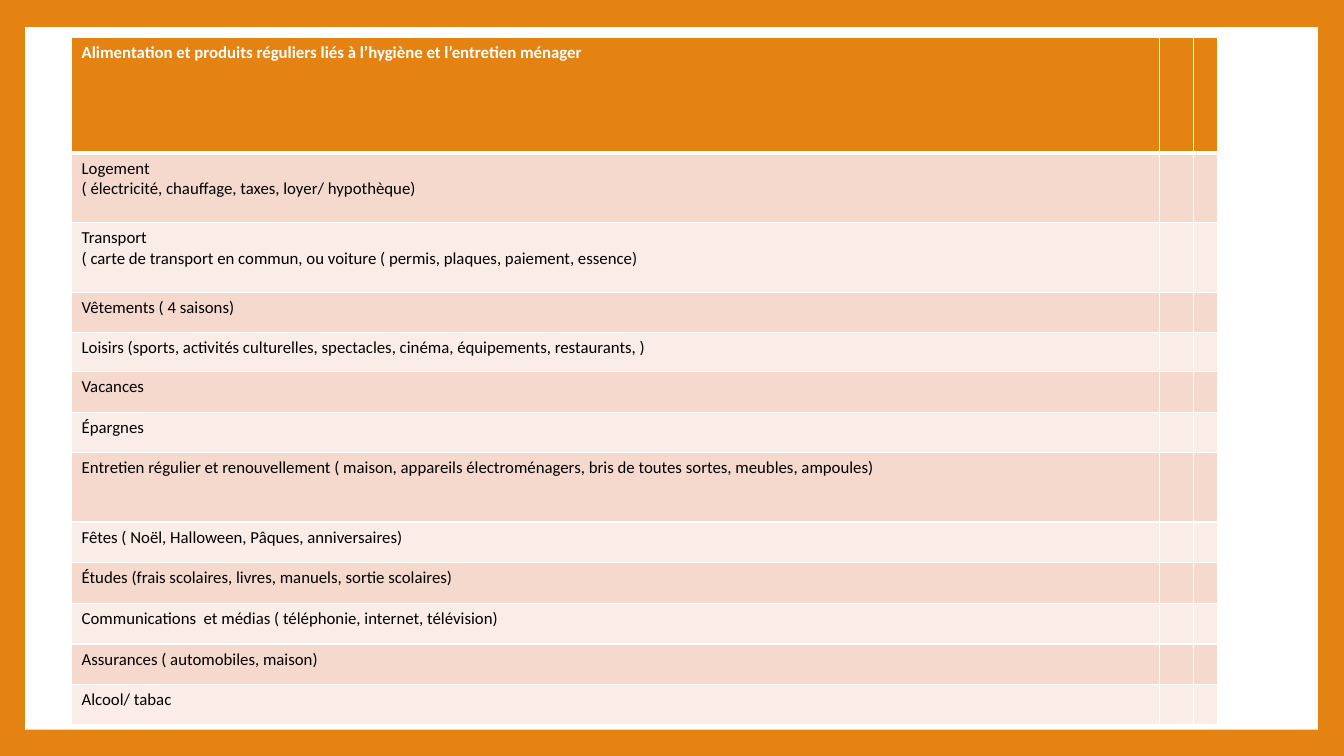
"""Build a slide with a table of household budget categories."""
import pptx
import pptx.dml.color
import pptx.enum.shapes
import pptx.oxml.ns
import pptx.util
from lxml import etree

Inches = pptx.util.Inches
Pt = pptx.util.Pt
RGBColor = pptx.dml.color.RGBColor

ORANGE = RGBColor(0xE4, 0x83, 0x12)
WHITE = RGBColor(0xFF, 0xFF, 0xFF)
BLACK = RGBColor(0x00, 0x00, 0x00)
DARK_BAND = RGBColor(0xF5, 0xD9, 0xCC)
LIGHT_BAND = RGBColor(0xFA, 0xED, 0xE7)

COLUMN_WIDTHS = [10.79, 0.34, 0.24]
BUDGET = [
    (1.15, ["Alimentation et produits réguliers liés à l’hygiène et l’entretien ménager"]),
    (0.69, ["Logement", "( électricité, chauffage, taxes, loyer/ hypothèque)"]),
    (0.69, ["Transport",
            "( carte de transport en commun, ou voiture ( permis, plaques, paiement, essence)"]),
    (0.4, ["Vêtements ( 4 saisons)"]),
    (0.39, ["Loisirs (sports, activités culturelles, spectacles, cinéma, équipements, restaurants, )"]),
    (0.4, ["Vacances"]),
    (0.4, ["Épargnes"]),
    (0.69, ["Entretien régulier et renouvellement ( maison, appareils électroménagers, "
            "bris de toutes sortes, meubles, ampoules)"]),
    (0.4, ["Fêtes ( Noël, Halloween, Pâques, anniversaires)"]),
    (0.41, ["Études (frais scolaires, livres, manuels, sortie scolaires)"]),
    (0.4, ["Communications  et médias ( téléphonie, internet, télévision)"]),
    (0.4, ["Assurances ( automobiles, maison)"]),
    (0.4, ["Alcool/ tabac"]),
]


def add_border(cell, side, points):
    qn = pptx.oxml.ns.qn
    properties = cell._tc.get_or_add_tcPr()
    line = etree.SubElement(properties, qn(f"a:ln{side}"), w=str(Pt(points)))
    fill = etree.SubElement(line, qn("a:solidFill"))
    etree.SubElement(fill, qn("a:srgbClr"), val=str(WHITE))


presentation = pptx.Presentation()
presentation.slide_width = Inches(13.33)
presentation.slide_height = Inches(7.5)
slide = presentation.slides.add_slide(presentation.slide_layouts[6])
slide.background.fill.solid()
slide.background.fill.fore_color.rgb = ORANGE

page = slide.shapes.add_shape(pptx.enum.shapes.MSO_SHAPE.RECTANGLE,
                              Inches(0.25), Inches(0.27), Inches(12.82), Inches(6.97))
page.shadow.inherit = False
page.fill.solid()
page.fill.fore_color.rgb = WHITE
page.line.fill.background()

budget_table = slide.shapes.add_table(len(BUDGET), len(COLUMN_WIDTHS), Inches(0.71),
                                      Inches(0.37), Inches(11.37), Inches(6.83)).table
for column, width in zip(budget_table.columns, COLUMN_WIDTHS):
    column.width = Inches(width)

for row_index, (height, lines) in enumerate(BUDGET):
    row = budget_table.rows[row_index]
    row.height = Inches(height)
    is_header = row_index == 0
    band = ORANGE if is_header else DARK_BAND if row_index % 2 else LIGHT_BAND
    for column_index, cell in enumerate(row.cells):
        add_border(cell, "L", 1)
        add_border(cell, "R", 1)
        add_border(cell, "T", 3 if row_index == 1 else 1)
        add_border(cell, "B", 3 if is_header else 1)
        cell.fill.solid()
        cell.fill.fore_color.rgb = band
        if column_index > 0:
            cell.margin_top = cell.margin_bottom = 0
            continue
        for line_index, text in enumerate(lines):
            frame = cell.text_frame
            paragraph = frame.add_paragraph() if line_index else frame.paragraphs[0]
            run = paragraph.add_run()
            run.text = text
            run.font.name = "Calibri"
            run.font.size = Pt(12)
            run.font.bold = is_header
            run.font.color.rgb = WHITE if is_header else BLACK

presentation.save("out.pptx")
